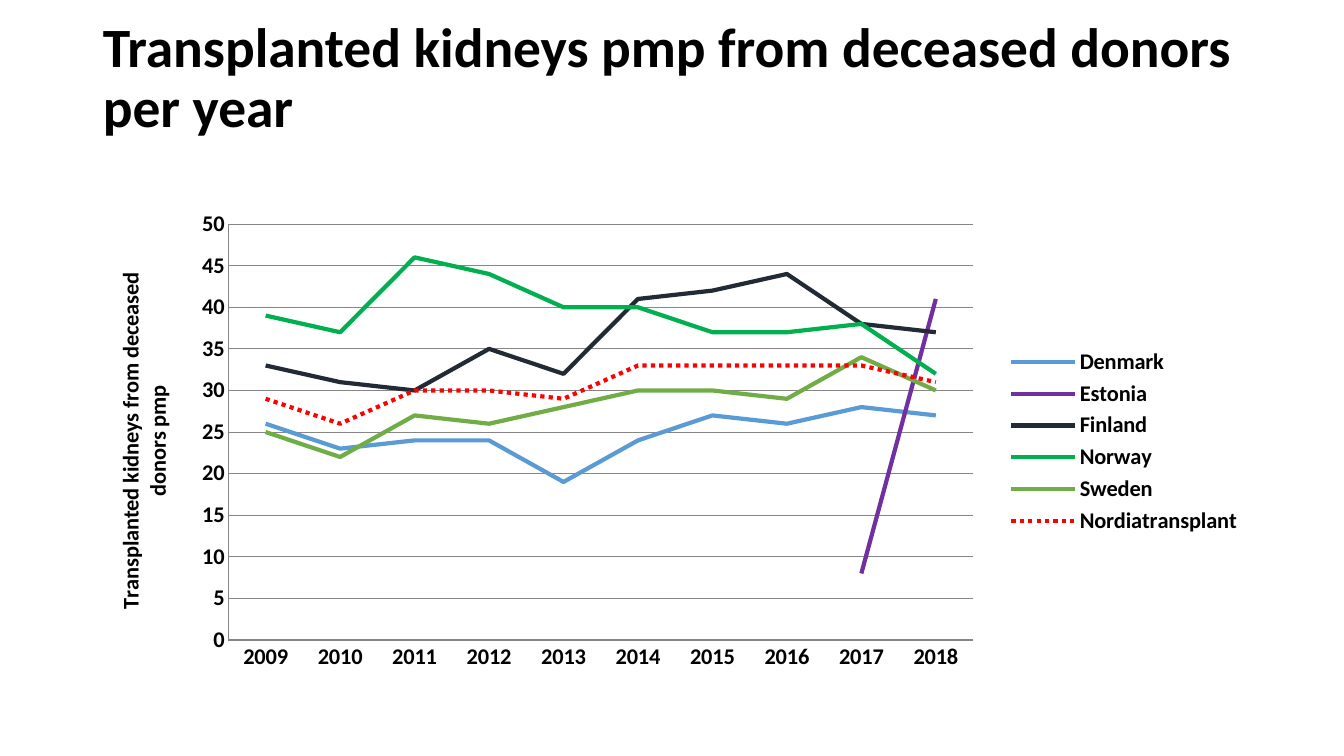
from lxml import etree
from pptx import Presentation
from pptx.chart.data import CategoryChartData as Data
from pptx.dml.color import RGBColor
from pptx.enum.chart import XL_CHART_TYPE as Kind, XL_LEGEND_POSITION as Spot, XL_TICK_MARK as Tick
from pptx.enum.dml import MSO_LINE as Dash
from pptx.enum.text import MSO_ANCHOR as Anchor, MSO_AUTO_SIZE as Fit, PP_ALIGN as Align
from pptx.oxml.ns import qn
from pptx.util import Inches, Pt

FONT = "Calibri"
BLACK = RGBColor(0x00, 0x00, 0x00)
GREY = RGBColor(0x86, 0x86, 0x86)
BLUE = RGBColor(0x5B, 0x9B, 0xD5)
PURPLE = RGBColor(0x70, 0x30, 0xA0)
NAVY = RGBColor(0x22, 0x2A, 0x35)
GREEN = RGBColor(0x00, 0xB0, 0x50)
OLIVE = RGBColor(0x70, 0xAD, 0x47)
RED = RGBColor(0xFF, 0x00, 0x00)

YEARS = [str(year) for year in range(2009, 2019)]
RATES = [
    ("Denmark", BLUE, [26, 23, 24, 24, 19, 24, 27, 26, 28, 27]),
    ("Estonia", PURPLE, [None] * 8 + [8, 41]),
    ("Finland", NAVY, [33, 31, 30, 35, 32, 41, 42, 44, 38, 37]),
    ("Norway", GREEN, [39, 37, 46, 44, 40, 40, 37, 37, 38, 32]),
    ("Sweden", OLIVE, [25, 22, 27, 26, 28, 30, 30, 29, 34, 30]),
    ("Nordiatransplant", RED, [29, 26, 30, 30, 29, 33, 33, 33, 33, 31]),
]
# Inner plot area, as shares of the chart
PLOT = {"x": 0.117, "y": 0.047, "w": 0.642, "h": 0.867}


def style(font, size):
    font.name, font.size, font.bold = FONT, Pt(size), True
    font.color.rgb = BLACK


def add_title(slide, box, text):
    title = slide.shapes.title
    title.left, title.top, title.width, title.height = box
    frame = title.text_frame
    frame.word_wrap = True
    frame.auto_size = Fit.NONE
    frame.vertical_anchor = Anchor.MIDDLE
    para = frame.paragraphs[0]
    para.alignment = Align.LEFT
    para.line_spacing = 0.9
    run = para.add_run()
    run.text = text
    style(run.font, 39.6)


def place_plot(chart):
    area = chart._chartSpace.chart.plotArea
    for old in area.findall(qn("c:layout")):
        area.remove(old)
    layout = etree.Element(qn("c:layout"))
    manual = etree.SubElement(layout, qn("c:manualLayout"))
    parts = {"layoutTarget": "inner", "xMode": "edge", "yMode": "edge", **PLOT}
    for name, value in parts.items():
        etree.SubElement(manual, qn(f"c:{name}")).set("val", str(value))
    area.insert(0, layout)


def add_rates(slide, box):
    data = Data()
    data.categories = YEARS
    for name, _, values in RATES:
        data.add_series(name, values)
    chart = slide.shapes.add_chart(Kind.LINE, *box, data).chart
    chart.has_title = False
    style(chart.font, 16)
    place_plot(chart)

    # Lines
    plot = chart.plots[0]
    plot.vary_by_categories = False
    for series, (_, color, _) in zip(plot.series, RATES):
        series.smooth = False
        series.format.line.color.rgb = color
        series.format.line.width = Pt(3)
    series.format.line.dash_style = Dash.ROUND_DOT

    # Axes
    rate = chart.value_axis
    for axis in (chart.category_axis, rate):
        axis.major_tick_mark = axis.minor_tick_mark = Tick.NONE
        axis.format.line.color.rgb = GREY
    rate.minimum_scale, rate.maximum_scale, rate.major_unit = 0, 50, 5
    rate.tick_labels.number_format = "0"
    rate.tick_labels.number_format_is_linked = False
    rate.has_major_gridlines = True
    rate.major_gridlines.format.line.color.rgb = GREY
    run = rate.axis_title.text_frame.paragraphs[0].add_run()
    run.text = "Transplanted kidneys from deceased donors pmp"
    style(run.font, 16)

    # Legend
    chart.has_legend = True
    chart.legend.position = Spot.RIGHT
    chart.legend.include_in_layout = False
    style(chart.legend.font, 16)


def main():
    deck = Presentation()
    deck.slide_width, deck.slide_height = Inches(13.33), Inches(7.5)
    slide = deck.slides.add_slide(deck.slide_layouts[5])
    wide, high = deck.slide_width, deck.slide_height
    left, width = int(wide * 0.069), int(wide * 0.863)
    add_title(slide, (left, int(high * 0.01), width, int(high * 0.19)),
              "Transplanted kidneys pmp from deceased donors per year")
    add_rates(slide, (left, Inches(2), width, Inches(4.76)))
    deck.save("out.pptx")


if __name__ == "__main__":
    main()
